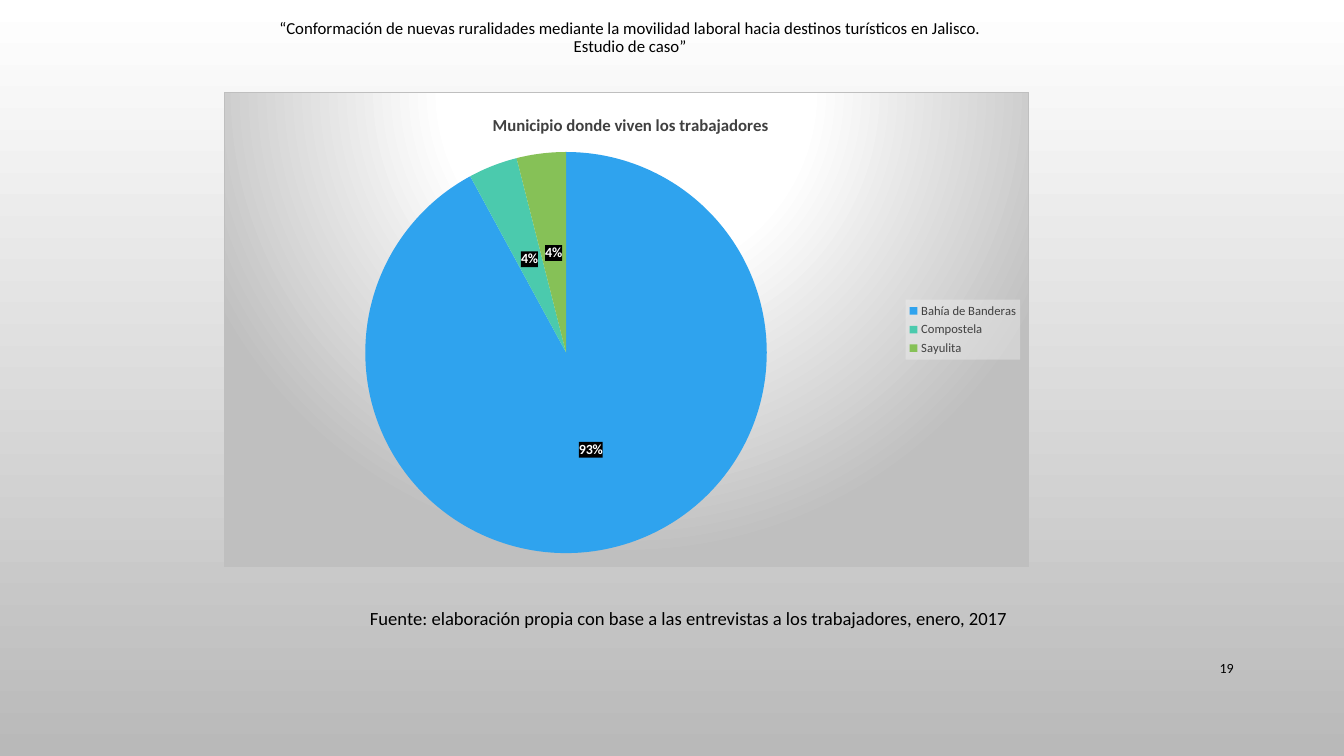
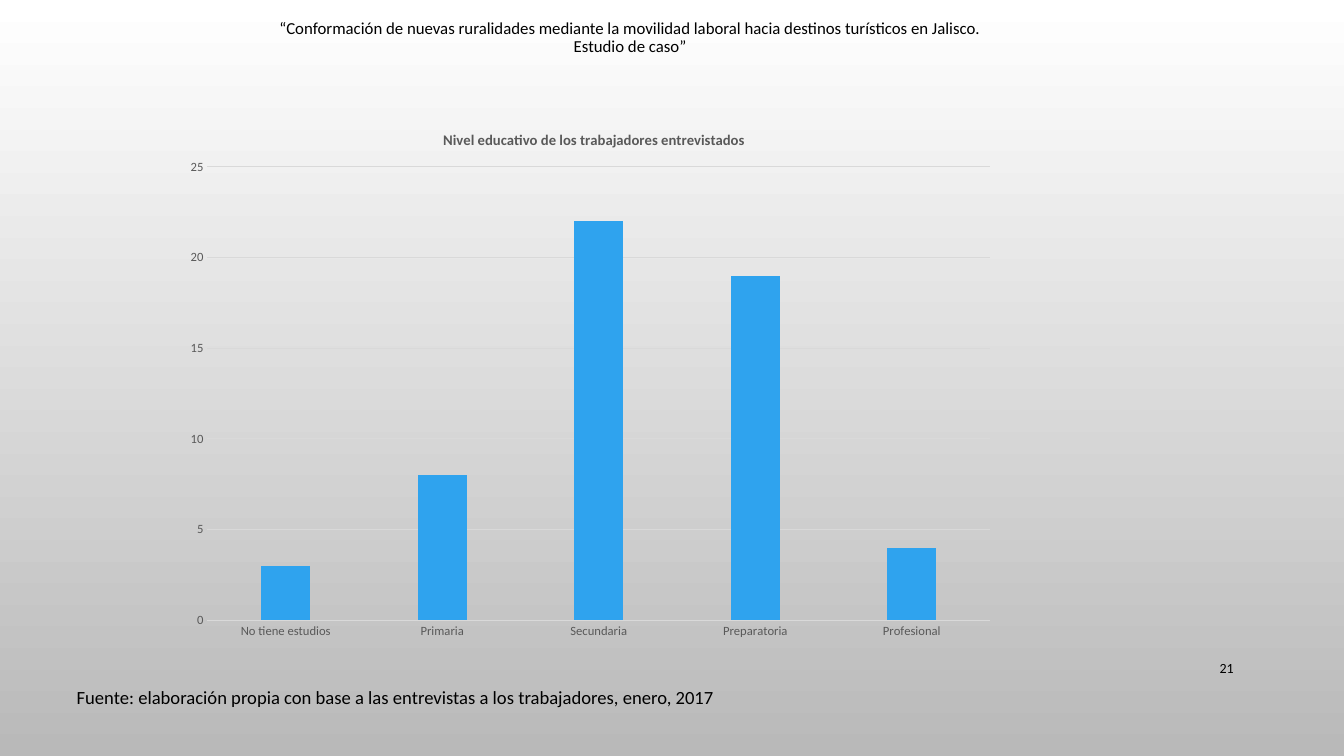
from dataclasses import dataclass

import pptx
import pptx.chart.data
import pptx.dml.color
import pptx.enum.chart
import pptx.enum.text
import pptx.oxml
import pptx.oxml.ns
import pptx.util

Cm, Pt = pptx.util.Cm, pptx.util.Pt
RGB = pptx.dml.color.RGBColor.from_string
ALIGN = pptx.enum.text.PP_ALIGN
ANCHOR = pptx.enum.text.MSO_ANCHOR
CHART = pptx.enum.chart.XL_CHART_TYPE


@dataclass(frozen=True)
class Theme:
    font: str = "Calibri"
    text: str = "000000"
    white: str = "FFFFFF"
    background_end: str = "B9B9B9"
    panel_gray: str = "BFBFBF"
    grid: str = "D9D9D9"
    legend_panel: str = "F2F2F2"
    dark: str = "404040"
    axis_text: str = "595959"
    slices: tuple = ("2FA3EE", "4BCAAD", "86C157")
    source_size: float = 13.3
    title_size: float = 12
    body_size: float = 10
    small_size: float = 9


theme = Theme()


def set_layout(element, position, **fractions):
    """Place a chart part by fractions of the chart's width and height."""
    previous = element.find("{*}layout")
    if previous is not None:
        element.remove(previous)
    modes = "".join(f'<c:{key}Mode val="edge"/>' for key in "xy")
    target = '<c:layoutTarget val="inner"/>' if "w" in fractions else ""
    values = "".join(f'<c:{key} val="{value}"/>' for key, value in fractions.items())
    element.insert(position, pptx.oxml.parse_xml(
        f'<c:layout {pptx.oxml.ns.nsdecls("c")}><c:manualLayout>'
        f"{target}{modes}{values}</c:manualLayout></c:layout>"))


def shape_properties(content):
    return pptx.oxml.parse_xml(
        f'<c:spPr {pptx.oxml.ns.nsdecls("c", "a")}>{content}</c:spPr>')


presentation = pptx.Presentation()
presentation.slide_width, presentation.slide_height = Cm(33.87), Cm(19.05)

background = presentation.slide_master.background.fill
background.gradient()
background.gradient_angle = 270
for stop, color in zip(background.gradient_stops, (theme.white, theme.background_end)):
    stop.color.rgb = RGB(color)

header_lines = (
    "“Conformación de nuevas ruralidades mediante la movilidad laboral hacia destinos turísticos en Jalisco.",
    "Estudio de caso”",
)
source_lines = ("Fuente: elaboración propia con base a las entrevistas a los trabajadores, enero, 2017",)

# Page number, source corner, chart kind, chart box, categories, values,
# title, title size, title colour, title corner, plot box
pages = (
    ("19", (8.89, 15.14), CHART.PIE, (5.64, 2.31, 20.29, 11.99),
     ("Bahía de Banderas", "Compostela", "Sayulita"), (93, 4, 4),
     "Municipio donde viven los trabajadores", 12, theme.dark,
     dict(x=0.33, y=0.04), dict(x=0.175, y=0.126, w=0.5, h=0.845)),
    ("21", (1.5, 17.12), CHART.COLUMN_CLUSTERED, (4.39, 2.67, 20.98, 13.72),
     ("No tiene estudios", "Primaria", "Secundaria", "Preparatoria", "Profesional"),
     (3, 8, 22, 19, 4),
     "Nivel educativo de los trabajadores entrevistados", 10.5, theme.axis_text,
     dict(x=0.32, y=0.04), dict(x=0.04, y=0.112, w=0.94, h=0.833)),
)

charts = []
for (number, source_corner, kind, chart_box, categories, values,
     title, title_size, title_color, title_corner, plot_box) in pages:
    slide = presentation.slides.add_slide(presentation.slide_layouts[6])

    texts = (
        (header_lines, (5.72, 0.45, 20.32, 1.04), theme.title_size, ALIGN.CENTER, 0.9),
        (source_lines, (*source_corner, 16.94, 0.84), theme.source_size, ALIGN.CENTER, 1.07),
        ((number,), (29.21, 16.33, 2.13, 1.02), theme.body_size, ALIGN.RIGHT, 1),
    )
    for lines, box, size, alignment, spacing in texts:
        shape = slide.shapes.add_textbox(*map(Cm, box))
        frame = shape.text_frame
        frame.word_wrap = True
        frame.vertical_anchor = ANCHOR.MIDDLE
        paragraph = frame.paragraphs[0]
        paragraph.alignment = alignment
        paragraph.line_spacing = spacing
        for index, line in enumerate(lines):
            if index:
                paragraph.add_line_break()
            run = paragraph.add_run()
            run.text = line
            run.font.name, run.font.size = theme.font, Pt(size)
            run.font.color.rgb = RGB(theme.text)

    data = pptx.chart.data.CategoryChartData()
    data.categories = categories
    data.add_series("Series 1", values)
    chart = slide.shapes.add_chart(kind, *map(Cm, chart_box), data).chart
    chart.font.name, chart.font.size = theme.font, Pt(theme.body_size)
    chart.font.color.rgb = RGB(theme.text)
    chart.has_title = True
    run = chart.chart_title.text_frame.paragraphs[0].add_run()
    run.text = title
    run.font.name, run.font.size, run.font.bold = theme.font, Pt(title_size), True
    run.font.color.rgb = RGB(title_color)
    set_layout(chart.chart_title._element, 1, **title_corner)
    set_layout(chart._chartSpace.chart.plotArea, 0, **plot_box)
    charts.append(chart)

pie, columns = charts

# Pie: radial panel, slices, percentages and legend
stops = "".join(
    f'<a:gs pos="{position}000"><a:srgbClr val="{color}"/></a:gs>'
    for position, color in ((0, theme.white), (39, theme.white), (100, theme.panel_gray)))
pie._chartSpace.chart.addnext(shape_properties(
    f'<a:gradFill><a:gsLst>{stops}</a:gsLst><a:path path="circle">'
    '<a:fillToRect l="50000" t="-80000" r="50000" b="180000"/></a:path></a:gradFill>'
    f'<a:ln w="9525"><a:solidFill><a:srgbClr val="{theme.panel_gray}"/></a:solidFill></a:ln>'))

plot = pie.plots[0]
plot.vary_by_categories = True
for index, color in enumerate(theme.slices):
    fill = plot.series[0].points[index].format.fill
    fill.solid()
    fill.fore_color.rgb = RGB(color)

plot.has_data_labels = True
labels = plot.data_labels
labels.show_value, labels.show_percentage = True, False
labels.number_format, labels.number_format_is_linked = '0"%"', False
labels.position = pptx.enum.chart.XL_LABEL_POSITION.CENTER
labels.font.name, labels.font.size, labels.font.bold = theme.font, Pt(theme.body_size), True
labels.font.color.rgb = RGB(theme.white)
labels._element.find("{*}numFmt").addnext(shape_properties(
    f'<a:solidFill><a:srgbClr val="{theme.text}"><a:alpha val="75000"/></a:srgbClr></a:solidFill>'))

pie.has_legend = True
legend = pie.legend
legend.position = pptx.enum.chart.XL_LEGEND_POSITION.RIGHT
legend.include_in_layout = False
legend._element.find("{*}overlay").addnext(shape_properties(
    f'<a:solidFill><a:srgbClr val="{theme.legend_panel}"><a:alpha val="39000"/></a:srgbClr></a:solidFill>'))
legend.font.name, legend.font.size = theme.font, Pt(theme.small_size)
legend.font.color.rgb = RGB(theme.dark)

# Columns: bars, axes and gridlines
columns.has_legend = False
plot = columns.plots[0]
plot.vary_by_categories = False
plot.gap_width, plot.overlap = 219, -27
fill = plot.series[0].format.fill
fill.solid()
fill.fore_color.rgb = RGB(theme.slices[0])

category_axis, value_axis = columns.category_axis, columns.value_axis
for axis in (category_axis, value_axis):
    axis.major_tick_mark = axis.minor_tick_mark = pptx.enum.chart.XL_TICK_MARK.NONE
    font = axis.tick_labels.font
    font.name, font.size = theme.font, Pt(theme.small_size)
    font.color.rgb = RGB(theme.axis_text)
value_axis.minimum_scale, value_axis.maximum_scale, value_axis.major_unit = 0, 25, 5
value_axis.has_major_gridlines = True
value_axis.format.line.fill.background()
for line in (category_axis.format.line, value_axis.major_gridlines.format.line):
    line.color.rgb = RGB(theme.grid)
    line.width = Pt(0.75)

presentation.save("out.pptx")
